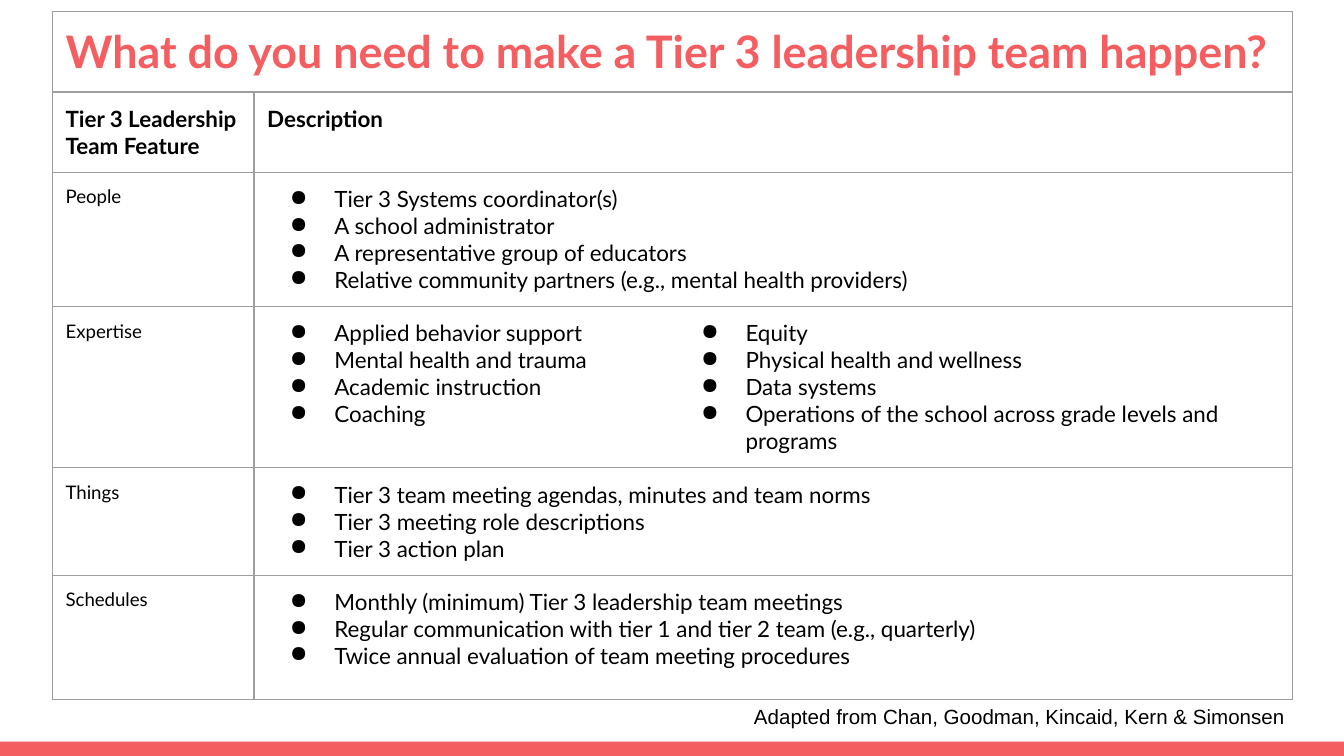
from lxml import etree
from pptx import Presentation
from pptx import util as u
from pptx.enum import shapes, text
from pptx.dml.color import RGBColor
from pptx.oxml.ns import qn

COLORS = {"accent": "F55E61", "ink": "000000", "border": "9E9E9E"}
INSET = u.Cm(0.25)
COLUMN_WIDTHS = (3.81, 7.77, 11.86)
ROW_HEIGHTS = (1.51, 1.51, 2.54, 3.05, 2.03, 2.35)

TITLE = "What do you need to make a Tier 3 leadership team happen?"
HEADINGS = ("Tier 3 Leadership Team Feature", "Description")
# Each feature has one list, or two lists side by side
FEATURES = {
    "People": [[
        "Tier 3 Systems coordinator(s)",
        "A school administrator",
        "A representative group of educators",
        "Relative community partners (e.g., mental health providers)",
    ]],
    "Expertise": [[
        "Applied behavior support",
        "Mental health and trauma",
        "Academic instruction",
        "Coaching",
    ], [
        "Equity",
        "Physical health and wellness",
        "Data systems",
        "Operations of the school across grade levels and programs",
    ]],
    "Things": [[
        "Tier 3 team meeting agendas, minutes and team norms",
        "Tier 3 meeting role descriptions",
        "Tier 3 action plan",
    ]],
    "Schedules": [[
        "Monthly (minimum) Tier 3 leadership team meetings",
        "Regular communication with tier 1 and tier 2 team (e.g., quarterly)",
        "Twice annual evaluation of team meeting procedures",
    ]],
}


class SlideBuilder:
    def __init__(self, slide, font="Lato"):
        self.slide = slide
        self.font = font

    def bar(self, left, top, width, height, color):
        shape = self.slide.shapes.add_shape(
            shapes.MSO_SHAPE.RECTANGLE, *map(u.Cm, (left, top, width, height)))
        shape.shadow.inherit = False
        shape.fill.solid()
        shape.fill.fore_color.rgb = RGBColor.from_string(COLORS[color])
        shape.line.fill.background()

    def fill_text(self, frame, lines, size, color="ink", bold=False, font=None, bullets=False):
        frame.word_wrap = True
        for index, line in enumerate(lines):
            paragraph = frame.paragraphs[0] if index == 0 else frame.add_paragraph()
            paragraph.text = line
            paragraph.font.name = font or self.font
            paragraph.font.size = u.Pt(size)
            paragraph.font.bold = bold
            paragraph.font.color.rgb = RGBColor.from_string(COLORS[color])
            if bullets:
                self.bullet(paragraph)

    def bullet(self, paragraph):
        properties = paragraph._p.get_or_add_pPr()
        properties.set("marL", str(u.Cm(1.27)))
        properties.set("indent", str(u.Cm(-0.84)))
        mark = etree.Element(qn("a:buChar"), char="●")
        properties.insert(0, mark)

    def borders(self, cell, hidden=()):
        properties = cell._tc.get_or_add_tcPr()
        for side in "LRTB":
            line = etree.SubElement(properties, qn(f"a:ln{side}"), w=str(u.Pt(0.75)))
            if side in hidden:
                etree.SubElement(line, qn("a:noFill"))
            else:
                fill = etree.SubElement(line, qn("a:solidFill"))
                etree.SubElement(fill, qn("a:srgbClr"), val=COLORS["border"])

    def table(self, left, top, widths, heights, open_row):
        table = self.slide.shapes.add_table(
            len(heights), len(widths), u.Cm(left), u.Cm(top),
            u.Cm(sum(widths)), u.Cm(sum(heights))).table
        table.first_row = table.horz_banding = False
        for column, width in zip(table.columns, widths):
            column.width = u.Cm(width)
        for row_index, (row, height) in enumerate(zip(table.rows, heights)):
            row.height = u.Cm(height)
            for column_index, cell in enumerate(row.cells):
                # The two lists of the open row have no line between them
                hidden = {1: "R", 2: "L"}.get(column_index, "") if row_index == open_row else ""
                self.borders(cell, hidden)
                cell.fill.background()
                cell.margin_left = cell.margin_right = INSET
                cell.margin_top = cell.margin_bottom = INSET
        return table

    def caption(self, left, top, width, height, line):
        box = self.slide.shapes.add_textbox(*map(u.Cm, (left, top, width, height)))
        frame = box.text_frame
        frame.margin_left = frame.margin_right = INSET
        frame.margin_top = frame.margin_bottom = INSET
        frame.auto_size = text.MSO_AUTO_SIZE.SHAPE_TO_FIT_TEXT
        self.fill_text(frame, [line], 11, font="Arial")


def main():
    presentation = Presentation()
    presentation.slide_width, presentation.slide_height = u.Cm(25.4), u.Cm(14.29)
    builder = SlideBuilder(presentation.slides.add_slide(presentation.slide_layouts[6]))

    # Bottom bar
    builder.bar(0, 14.02, 25.4, 0.27, "accent")

    # Table with the title in its first row
    open_row = 2 + list(FEATURES).index("Expertise")
    table = builder.table(0.99, 0.22, COLUMN_WIDTHS, ROW_HEIGHTS, open_row)
    table.cell(0, 0).merge(table.cell(0, 2))
    builder.fill_text(table.cell(0, 0).text_frame, [TITLE], 24, "accent", bold=True)
    table.cell(1, 1).merge(table.cell(1, 2))
    for column, heading in enumerate(HEADINGS):
        builder.fill_text(table.cell(1, column).text_frame, [heading], 12, bold=True)

    # Feature rows
    for row, (feature, lists) in enumerate(FEATURES.items(), start=2):
        builder.fill_text(table.cell(row, 0).text_frame, [feature], 10)
        if len(lists) == 1:
            table.cell(row, 1).merge(table.cell(row, 2))
        for column, items in enumerate(lists, start=1):
            builder.fill_text(table.cell(row, column).text_frame, items, 12, bullets=True)

    # Credit line
    builder.caption(14, 13.08, 10.59, 0.99,
                    "Adapted from Chan, Goodman, Kincaid, Kern & Simonsen")

    presentation.save("out.pptx")


if __name__ == "__main__":
    main()
